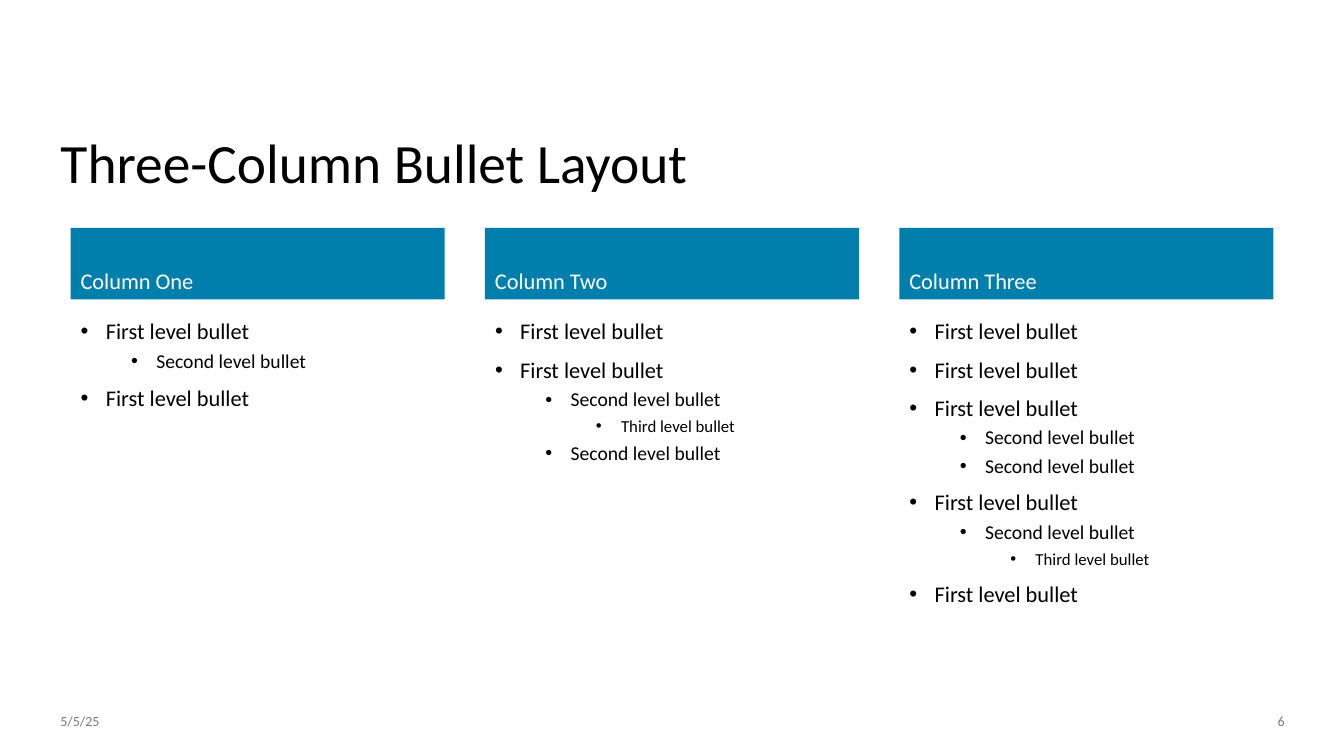
from dataclasses import dataclass

from lxml.etree import SubElement
from pptx import Presentation
from pptx.dml.color import RGBColor
from pptx.enum.shapes import MSO_SHAPE as Shape
from pptx.enum.text import MSO_ANCHOR as Anchor, MSO_AUTO_SIZE as AutoSize, PP_ALIGN as Align
from pptx.oxml.ns import qn
from pptx.slide import Slide
from pptx.text.text import TextFrame
from pptx.util import Inches, Pt

BLACK = RGBColor(0x00, 0x00, 0x00)
WHITE = RGBColor(0xFF, 0xFF, 0xFF)
GRAY = RGBColor(0x79, 0x79, 0x79)
BLUE = RGBColor(0x00, 0x7F, 0xAC)
FONT = "Calibri"

WIDTH, HEIGHT = Inches(13.33), Inches(7.5)
GRID_COLUMNS, GRID_ROWS = 133.3, 75
MARGIN, GUTTER, COLUMN_COUNT = 7, 4, 3
COLUMN_WIDTH = (GRID_COLUMNS - 2 * MARGIN - GUTTER * (COLUMN_COUNT - 1)) / COLUMN_COUNT
LEVEL_SIZES = (16, 14, 12)
LEVEL_SPACES = (10, 5, 5)
LEVEL_WORDS = ("First", "Second", "Third")


@dataclass(frozen=True)
class Area:
    """A rectangle in grid columns and rows."""
    left: float
    top: float
    width: float
    height: float

    def box(self) -> tuple[int, int, int, int]:
        """Return left, top, width and height as slide lengths."""
        across, down = WIDTH / GRID_COLUMNS, HEIGHT / GRID_ROWS
        return (round(self.left * across), round(self.top * down),
                round(self.width * across), round(self.height * down))


@dataclass(frozen=True)
class Column:
    """A heading and the levels of the bullets below it."""
    heading: str
    levels: tuple[int, ...]


COLUMNS = (
    Column("Column One", (0, 1, 0)),
    Column("Column Two", (0, 0, 1, 2, 1)),
    Column("Column Three", (0, 0, 0, 1, 1, 0, 1, 2, 0)),
)


def place(shape, area: Area) -> None:
    """Move and size a shape to its grid area."""
    shape.left, shape.top, shape.width, shape.height = area.box()


def prepare(frame: TextFrame, anchor: Anchor) -> None:
    """Wrap a text frame at a fixed size."""
    frame.word_wrap = True
    frame.auto_size = AutoSize.NONE
    frame.vertical_anchor = anchor


def write(frame: TextFrame, text: str, *, size: float, color: RGBColor = BLACK,
          align: Align = Align.LEFT, spacing: float = 1, before: float = 0,
          level: int = 0, bullet: bool = False) -> None:
    """Write one formatted paragraph into a text frame."""
    first = frame.paragraphs[0]
    para = first if not first.runs else frame.add_paragraph()
    para.level = level
    para.alignment = align
    para.line_spacing = spacing
    para.space_before = Pt(0 if para is first else before)
    if bullet:
        properties = para._p.get_or_add_pPr()
        properties.set("marL", str(Inches(0.25 + 0.5 * level)))
        properties.set("indent", str(Inches(-0.25)))
        SubElement(properties, qn("a:buFont"), typeface="Arial")
        SubElement(properties, qn("a:buChar"), char="•")
    span = para.add_run()
    span.text = text
    span.font.name = FONT
    span.font.size = Pt(size)
    span.font.bold = False
    span.font.color.rgb = color


def add_heading(page: Slide, text: str, area: Area) -> None:
    """Add a blue column heading."""
    banner = page.shapes.add_shape(Shape.RECTANGLE, *area.box())
    banner.shadow.inherit = False
    banner.fill.solid()
    banner.fill.fore_color.rgb = BLUE
    banner.line.fill.background()
    prepare(banner.text_frame, Anchor.BOTTOM)
    write(banner.text_frame, text, size=16, color=WHITE, spacing=0.9)


def fill_list(body, levels: tuple[int, ...], area: Area) -> None:
    """Fill a body placeholder with bullets."""
    place(body, area)
    prepare(body.text_frame, Anchor.TOP)
    for level in levels:
        write(body.text_frame, f"{LEVEL_WORDS[level]} level bullet", size=LEVEL_SIZES[level],
              spacing=0.9, before=LEVEL_SPACES[level], level=level, bullet=True)


def add_footer(page: Slide, text: str, left: float, align: Align) -> None:
    """Add a small gray footer text."""
    box = page.shapes.add_textbox(*Area(left, 69.5, 34.2, 4).box())
    prepare(box.text_frame, Anchor.MIDDLE)
    write(box.text_frame, text, size=10, color=GRAY, align=align)


def main() -> None:
    """Build the slide and save the deck."""
    deck = Presentation()
    deck.slide_width, deck.slide_height = WIDTH, HEIGHT
    page = deck.slides.add_slide(deck.slide_layouts.get_by_name("Comparison"))
    title, *bodies = page.placeholders
    place(title, Area(5, 13, 123.3, 6.9))
    prepare(title.text_frame, Anchor.MIDDLE)
    write(title.text_frame, "Three-Column Bullet Layout", size=39.6, spacing=0.9)
    for index, (column, body) in enumerate(zip(COLUMNS, bodies)):
        left = MARGIN + index * (COLUMN_WIDTH + GUTTER)
        add_heading(page, column.heading, Area(left, 22.6, COLUMN_WIDTH, 7.1))
        fill_list(body, column.levels, Area(left, 31.3, COLUMN_WIDTH, 33.1))
    for spare in bodies[COLUMN_COUNT:]:
        spare.element.getparent().remove(spare.element)
    add_footer(page, "5/5/25", 5, Align.LEFT)
    add_footer(page, "6", 94.2, Align.RIGHT)
    deck.save("out.pptx")


if __name__ == "__main__":
    main()
